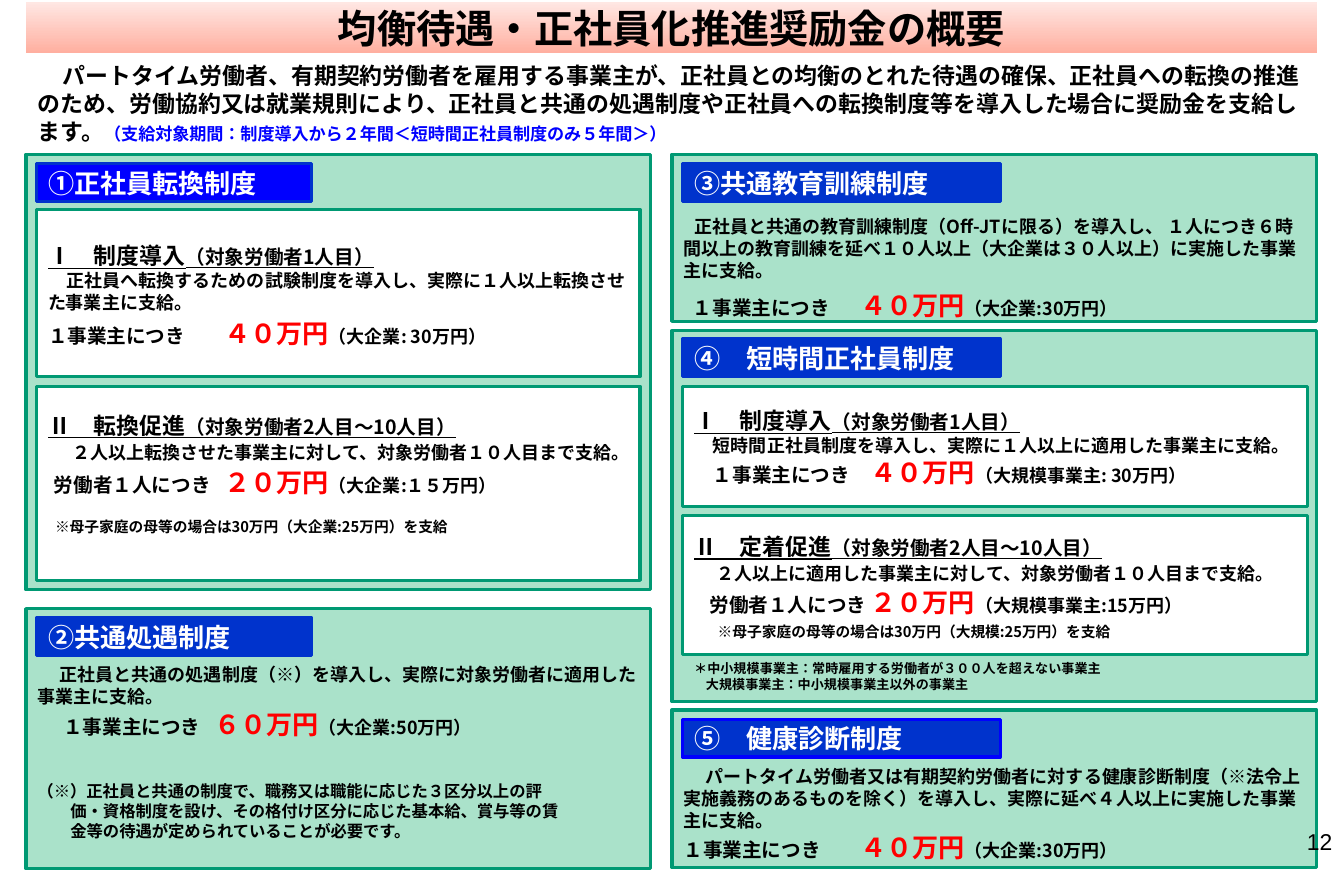
"""Build the one-page overview of the balanced-treatment incentive payments."""
from lxml.etree import SubElement
from pptx import Presentation
from pptx.dml.color import RGBColor
from pptx.enum.lang import MSO_LANGUAGE_ID
from pptx.enum.shapes import MSO_SHAPE
from pptx.enum.text import MSO_ANCHOR, MSO_AUTO_SIZE, PP_ALIGN
from pptx.oxml.ns import qn
from pptx.util import Inches, Pt

THEME = {
    "font": "Noto Sans CJK JP",
    "number_font": "Arial",
    "line_factor": 1.22,
    "panel": "AAE2CA",
    "border": "009973",
    "box": "FFFFFF",
    "label": "0033CC",
    "bright": "0000FF",
    "banner": ("FFAFA0", "FFE7E3"),
    "styles": {
        "title": (24, "000000", False),
        "label": (16, "FFFFFF", False),
        "intro": (14, "000000", False),
        "period": (10.5, "0000FF", False),
        "step": (14, "000000", True),
        "target": (12, "000000", True),
        "text": (11, "000000", False),
        "unit": (12, "000000", False),
        "amount": (16, "FF0000", False),
        "remark": (10, "000000", False),
        "small": (9, "000000", False),
        "tiny": (8, "000000", False),
    },
}


def write(shape, paragraphs, top=0.0, anchor=MSO_ANCHOR.TOP, align=PP_ALIGN.LEFT):
    """Write paragraphs given as (space before, indent, tab, spans)."""
    frame = shape.text_frame
    frame_format = {
        "word_wrap": True, "auto_size": MSO_AUTO_SIZE.NONE, "vertical_anchor": anchor,
        "margin_left": Inches(0.1), "margin_right": Inches(0.1),
        "margin_top": Inches(top), "margin_bottom": 0,
    }
    for name, value in frame_format.items():
        setattr(frame, name, value)
    for index, (before, indent, tab, spans) in enumerate(paragraphs):
        para = frame.add_paragraph() if index else frame.paragraphs[0]
        tallest = max(THEME["styles"][style][0] for style, _ in spans)
        para_format = {
            "alignment": align, "space_before": Pt(before), "space_after": Pt(0),
            "line_spacing": Pt(round(tallest * THEME["line_factor"], 1)),
        }
        for name, value in para_format.items():
            setattr(para, name, value)
        properties = para._p.get_or_add_pPr()
        properties.set("marL", "0")
        properties.set("indent", str(Inches(indent)))
        SubElement(properties, qn("a:buNone"))
        if tab:
            stops = SubElement(properties, qn("a:tabLst"))
            SubElement(stops, qn("a:tab"), pos=str(Inches(tab)), algn="l")
        for style, text in spans:
            size, color, underline = THEME["styles"][style]
            span = para.add_run()
            span.text = text
            span_format = {
                "size": Pt(size), "bold": True, "underline": underline,
                "name": THEME["font"], "language_id": MSO_LANGUAGE_ID.JAPANESE,
            }
            for name, value in span_format.items():
                setattr(span.font, name, value)
            span.font.color.rgb = RGBColor.from_string(color)
            SubElement(span._r.get_or_add_rPr(), qn("a:ea"), typeface=THEME["font"])


def add_box(page, area, fill, line):
    """Add a flat rectangle with a 2 pt outline."""
    box = page.shapes.add_shape(MSO_SHAPE.RECTANGLE, *map(Inches, area))
    box.shadow.inherit = False
    box.fill.solid()
    box.fill.fore_color.rgb = RGBColor.from_string(fill)
    box.line.color.rgb = RGBColor.from_string(line)
    box.line.width = Pt(2)
    return box


deck = Presentation()
deck.slide_width, deck.slide_height = Inches(11.42), Inches(7.5)
page = deck.slides.add_slide(deck.slide_layouts[1])

title, intro = page.shapes.title, page.placeholders[1]
for holder, area in ((title, (0.22, 0.02, 10.97, 0.43)), (intro, (0.22, 0.44, 10.97, 0.79))):
    for side, length in zip(("left", "top", "width", "height"), area):
        setattr(holder, side, Inches(length))
title.fill.gradient()
title.fill.gradient_angle = 90
for stop, color in zip(title.fill.gradient_stops, THEME["banner"]):
    stop.color.rgb = RGBColor.from_string(color)
write(title, [(0, 0, 0, [("title", "均衡待遇・正社員化推進奨励金の概要")])],
      anchor=MSO_ANCHOR.MIDDLE, align=PP_ALIGN.CENTER)
write(intro, [(0, 0.21, 0, [
    ("intro", "パートタイム労働者、有期契約労働者を雇用する事業主が、正社員との均衡のとれた待遇の確保、正社員への転換の推進のため、"
              "労働協約又は就業規則により、正社員と共通の処遇制度や正社員への転換制度等を導入した場合に奨励金を支給します。"),
    ("period", "（支給対象期間：制度導入から２年間＜短時間正社員制度のみ５年間＞）")])], top=0.08)

LEFT, RIGHT = (0.22, 5.31), (5.71, 5.48)
panels = [
    (LEFT, 1.31, 3.7, 0, []),
    (LEFT, 5.17, 2.21, 0.46, [
        (0, 0.19, 0, [("text", "正社員と共通の処遇制度（※）を導入し、実際に対象労働者に適用した事業主に支給。")]),
        (1, 0.22, 1.63, [("unit", "１事業主につき\t"), ("amount", "６０万円"), ("text", "（大企業:50万円）")]),
        (25, 0, 0, [("remark", "（※）正社員と共通の制度で、職務又は職能に応じた３区分以上の評")]),
        (0, 0.28, 0, [("remark", "価・資格制度を設け、その格付け区分に応じた基本給、賞与等の賃")]),
        (0, 0.28, 0, [("remark", "金等の待遇が定められていることが必要です。")]),
    ]),
    (RIGHT, 1.31, 1.42, 0.52, [
        (0, 0.09, 0, [("text", "正社員と共通の教育訓練制度（Off-JTに限る）を導入し、 １人につき６時間以上の教育訓練を"
                               "延べ１０人以上（大企業は３０人以上）に実施した事業主に支給。")]),
        (4.5, 0.08, 1.7, [("unit", "１事業主につき\t"), ("amount", "４０万円"), ("text", "（大企業:30万円）")]),
    ]),
    (RIGHT, 2.81, 3.15, 0, []),
    (RIGHT, 6.03, 1.34, 0.47, [
        (0, 0.19, 0, [("text", "パートタイム労働者又は有期契約労働者に対する健康診断制度（※法令上実施義務のあるものを除く）"
                               "を導入し、実際に延べ４人以上に実施した事業主に支給。")]),
        (0, 0, 1.53, [("unit", "１事業主につき\t"), ("amount", "４０万円"), ("text", "（大企業:30万円）")]),
    ]),
]
for (left, width), top, height, inset, paragraphs in panels:
    panel = add_box(page, (left, top, width, height), THEME["panel"], THEME["border"])
    write(panel, paragraphs, inset)

labels = [
    (0.31, 1.39, 2.34, "bright", "label", "①正社員転換制度"),
    (0.31, 5.25, 2.34, "label", "label", "②共通処遇制度"),
    (5.8, 1.39, 2.7, "label", "label", "③共通教育訓練制度"),
    (5.8, 2.88, 2.7, "label", "label", "④　短時間正社員制度"),
    (5.8, 6.11, 2.7, "label", "bright", "⑤　健康診断制度"),
]
for left, top, width, fill, line, text in labels:
    label = add_box(page, (left, top, width, 0.32), THEME[fill], THEME[line])
    write(label, [(0, 0, 0, [("label", text)])], anchor=MSO_ANCHOR.MIDDLE)

first_target, next_target = ("target", "（対象労働者1人目）"), ("target", "（対象労働者2人目～10人目）")
steps = [
    ((0.31, 1.78, 5.13, 1.42), 0.27, [
        (0, 0, 0, [("step", "Ⅰ　制度導入"), first_target]),
        (0, 0.16, 0, [("text", "正社員へ転換するための試験制度を導入し、実際に１人以上転換させた事業主に支給。")]),
        (2, 0, 1.59, [("unit", "１事業主につき\t"), ("amount", "４０万円"), ("text", "（大企業: 30万円）")]),
    ]),
    ((0.31, 3.28, 5.13, 1.65), 0.21, [
        (0, 0, 0, [("step", "Ⅱ　転換促進"), next_target]),
        (1.5, 0.21, 0, [("text", "２人以上転換させた事業主に対して、対象労働者１０人目まで支給。")]),
        (1.5, 0.05, 1.58, [("unit", "労働者１人につき\t"), ("amount", "２０万円"), ("text", "（大企業:１５万円）")]),
        (12.5, 0.06, 0, [("small", "※母子家庭の母等の場合は30万円（大企業:25万円）を支給")]),
    ]),
    ((5.8, 3.28, 5.31, 1.02), 0.17, [
        (0, 0, 0, [("step", "Ⅰ　制度導入"), first_target]),
        (0, 0.16, 0, [("text", "短時間正社員制度を導入し、実際に１人以上に適用した事業主に支給。")]),
        (0, 0.16, 1.46, [("unit", "１事業主につき\t"), ("amount", "４０万円"), ("text", "（大規模事業主: 30万円）")]),
    ]),
    ((5.8, 4.38, 5.31, 1.18), 0.14, [
        (0, 0, 0, [("step", "Ⅱ　定着促進"), next_target]),
        (1.5, 0.19, 0, [("text", "２人以上に適用した事業主に対して、対象労働者１０人目まで支給。")]),
        (1, 0.13, 1.53, [("unit", "労働者１人につき\t"), ("amount", "２０万円"), ("text", "（大規模事業主:15万円）")]),
        (2.5, 0.2, 0, [("small", "※母子家庭の母等の場合は30万円（大規模:25万円）を支給")]),
    ]),
]
for area, inset, paragraphs in steps:
    write(add_box(page, area, THEME["box"], THEME["border"]), paragraphs, inset)

footnote = page.shapes.add_textbox(*map(Inches, (5.8, 5.56, 5.31, 0.4)))
write(footnote, [
    (0, 0, 0, [("tiny", "＊中小規模事業主：常時雇用する労働者が３００人を超えない事業主")]),
    (0, 0.1, 0, [("tiny", "大規模事業主：中小規模事業主以外の事業主")]),
], 0.05)

number = page.shapes.add_textbox(*map(Inches, (8.76, 6.98, 2.66, 0.52)))
number.text_frame.word_wrap = True
para = number.text_frame.paragraphs[0]
para.alignment = PP_ALIGN.RIGHT
span = para.add_run()
span.text = "12"
for name, value in {"size": Pt(14), "name": THEME["number_font"]}.items():
    setattr(span.font, name, value)
span.font.color.rgb = RGBColor.from_string("000000")

deck.save("out.pptx")
